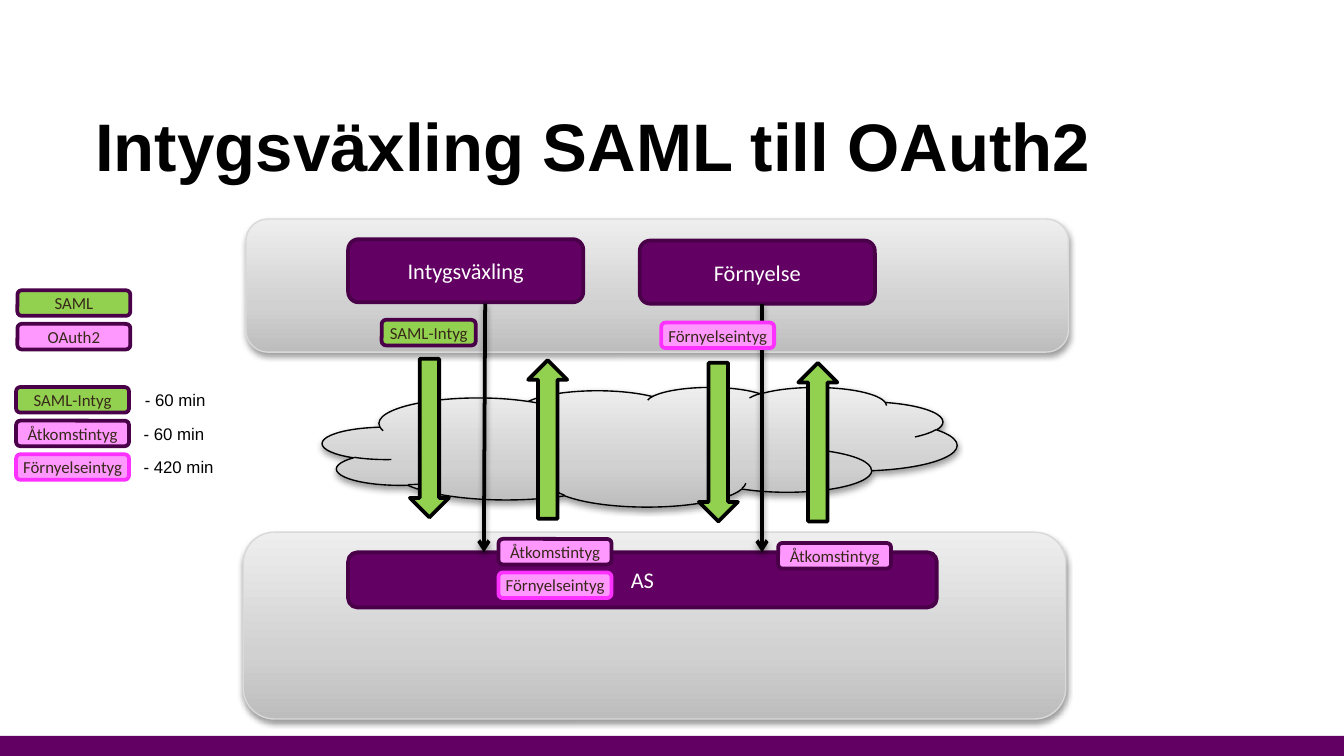
"""Build the slide on exchanging SAML assertions for OAuth2 tokens."""
from lxml.etree import SubElement
from pptx import Presentation
from pptx.dml.color import RGBColor
from pptx.enum.shapes import MSO_CONNECTOR, MSO_SHAPE
from pptx.enum.text import MSO_ANCHOR, PP_ALIGN
from pptx.oxml.ns import qn
from pptx.util import Inches, Pt

PURPLE = RGBColor(0x62, 0x00, 0x63)
DARK_PURPLE = RGBColor(0x49, 0x00, 0x49)
GREEN = RGBColor(0x92, 0xD0, 0x50)
PINK = RGBColor(0xFE, 0x98, 0xFF)
MAGENTA = RGBColor(0xFD, 0x31, 0xFF)
BROWN = RGBColor(0x38, 0x28, 0x19)
GRAY = RGBColor(0xD9, 0xD9, 0xD9)
BLACK = RGBColor(0x00, 0x00, 0x00)
WHITE = RGBColor(0xFF, 0xFF, 0xFF)
GRADIENT = [(0, "BDBDBD"), (35, "D1D1D1"), (100, "EEEEEE")]

SLIDE_WIDTH = 10
SLIDE_HEIGHT = SLIDE_WIDTH * 9 / 16
FOOTER_HEIGHT = 0.15

TITLE = "Intygsväxling SAML till OAuth2"
BACKDROPS = [
    (MSO_SHAPE.CLOUD, (2.4, 2.88, 4.72, 0.89), BLACK),
    (MSO_SHAPE.ROUNDED_RECTANGLE, (1.81, 3.96, 6.12, 1.39), GRAY),
    (MSO_SHAPE.ROUNDED_RECTANGLE, (1.83, 1.63, 6.12, 0.99), GRAY),
]
SERVICES = [
    ("AS", (2.59, 4.11, 4.38, 0.41)),
    ("Intygsväxling", (2.59, 1.78, 1.75, 0.47)),
    ("Förnyelse", (4.76, 1.79, 1.75, 0.47)),
]
BLOCK_ARROWS = [(3.05, 2.67, 0), (3.93, 2.68, 180), (5.2, 2.7, 0), (5.94, 2.7, 180)]
CALLS = [(3.61, 3.6), (5.67, 5.67)]
CALL_TOP, CALL_BOTTOM = 2.26, 4.11

TAG_WIDTH, TAG_HEIGHT, TAG_STEP = 0.84, 0.19, 0.25
TAG_STYLES = {
    "SAML": (GREEN, DARK_PURPLE),
    "OAuth2": (PINK, DARK_PURPLE),
    "SAML-Intyg": (GREEN, DARK_PURPLE),
    "Åtkomstintyg": (PINK, DARK_PURPLE),
    "Förnyelseintyg": (PINK, MAGENTA),
}
TAG_STACKS = [
    (2.84, 2.38, 0.7, ["SAML-Intyg"]),
    (4.92, 2.4, TAG_WIDTH, ["Förnyelseintyg"]),
    (3.71, 4.01, TAG_WIDTH, ["Åtkomstintyg", "Förnyelseintyg"]),
    (5.79, 4.04, TAG_WIDTH, ["Åtkomstintyg"]),
    (0.13, 2.16, TAG_WIDTH, ["SAML", "OAuth2"]),
    (0.12, 2.88, TAG_WIDTH, ["SAML-Intyg", "Åtkomstintyg", "Förnyelseintyg"]),
]
LIFETIMES = [("- 60 min", 0.98, 0.66), ("- 60 min", 0.97, 0.66), ("- 420 min", 0.97, 0.73)]
LIFETIME_TOP = 2.85


def add_shadow(effects):
    shadow = SubElement(effects, qn("a:outerShdw"), blurRad="40000", dist="20000",
                        dir="5400000", rotWithShape="0")
    color = SubElement(shadow, qn("a:srgbClr"), val="000000")
    SubElement(color, qn("a:alpha"), val="38000")


def write(paragraph, text, size, font_name, color, bold=False):
    run = paragraph.add_run()
    run.text = text
    run.font.size = Pt(size)
    run.font.name = font_name
    run.font.color.rgb = color
    run.font.bold = bold


def add_shape(slide, kind, box, fill, line=None, line_width=2):
    shape = slide.shapes.add_shape(kind, *map(Inches, box))
    shape.shadow.inherit = False
    shape.fill.solid()
    shape.fill.fore_color.rgb = fill
    if line is None:
        shape.line.fill.background()
    else:
        shape.line.color.rgb = line
        shape.line.width = Pt(line_width)
    return shape


def add_backdrop(slide, kind, box, line):
    shape = add_shape(slide, kind, box, GRAY, line, 0.75)
    shape.fill.gradient()
    gradient = shape._element.spPr.find(qn("a:gradFill"))
    for child in list(gradient):
        gradient.remove(child)
    stops = SubElement(gradient, qn("a:gsLst"))
    for position, color in GRADIENT:
        stop = SubElement(stops, qn("a:gs"), pos=str(position * 1000))
        SubElement(stop, qn("a:srgbClr"), val=color)
    SubElement(gradient, qn("a:lin"), ang="16200000", scaled="0")
    add_shadow(shape._element.spPr.find(qn("a:effectLst")))


def add_label_box(slide, text, box, fill, line, size, color):
    shape = add_shape(slide, MSO_SHAPE.ROUNDED_RECTANGLE, box, fill, line)
    frame = shape.text_frame
    frame.word_wrap = True
    frame.vertical_anchor = MSO_ANCHOR.MIDDLE
    frame.margin_left = frame.margin_right = Inches(0.03)
    paragraph = frame.paragraphs[0]
    paragraph.alignment = PP_ALIGN.CENTER
    write(paragraph, text, size, "Calibri", color)


def add_call(slide, start_x, end_x):
    connector = slide.shapes.add_connector(
        MSO_CONNECTOR.STRAIGHT,
        *map(Inches, (start_x, CALL_TOP, end_x, CALL_BOTTOM)))
    connector.line.color.rgb = BLACK
    connector.line.width = Pt(2)
    SubElement(connector.line._get_or_add_ln(), qn("a:tailEnd"), type="arrow")
    add_shadow(SubElement(connector._element.spPr, qn("a:effectLst")))


def add_title(slide):
    frame = slide.shapes.add_textbox(*map(Inches, (0.71, 0.81, 7.73, 0.52))).text_frame
    frame.word_wrap = True
    frame.margin_left = frame.margin_right = frame.margin_top = frame.margin_bottom = 0
    frame.paragraphs[0].line_spacing = Pt(41)
    write(frame.paragraphs[0], TITLE, 36, "Arial", BLACK, bold=True)


def main():
    presentation = Presentation()
    presentation.slide_width = Inches(SLIDE_WIDTH)
    presentation.slide_height = Inches(SLIDE_HEIGHT)
    slide = presentation.slides.add_slide(presentation.slide_layouts[6])

    footer = (0, SLIDE_HEIGHT - FOOTER_HEIGHT, SLIDE_WIDTH, FOOTER_HEIGHT)
    add_shape(slide, MSO_SHAPE.RECTANGLE, footer, PURPLE)
    add_title(slide)
    for kind, box, line in BACKDROPS:
        add_backdrop(slide, kind, box, line)
    for text, box in SERVICES:
        add_label_box(slide, text, box, PURPLE, DARK_PURPLE, 12, WHITE)
    for left, top, rotation in BLOCK_ARROWS:
        arrow = add_shape(slide, MSO_SHAPE.DOWN_ARROW, (left, top, 0.29, 1.18), GREEN, BLACK)
        arrow.rotation = rotation
    for start_x, end_x in CALLS:
        add_call(slide, start_x, end_x)
    for left, top, width, names in TAG_STACKS:
        for row, name in enumerate(names):
            box = (left, top + row * TAG_STEP, width, TAG_HEIGHT)
            add_label_box(slide, name, box, *TAG_STYLES[name], 9, BROWN)
    for row, (text, left, width) in enumerate(LIFETIMES):
        box = (left, LIFETIME_TOP + row * TAG_STEP, width, 0.25)
        frame = slide.shapes.add_textbox(*map(Inches, box)).text_frame
        frame.word_wrap = False
        write(frame.paragraphs[0], text, 9, "Arial", BLACK)

    presentation.save("out.pptx")


if __name__ == "__main__":
    main()
